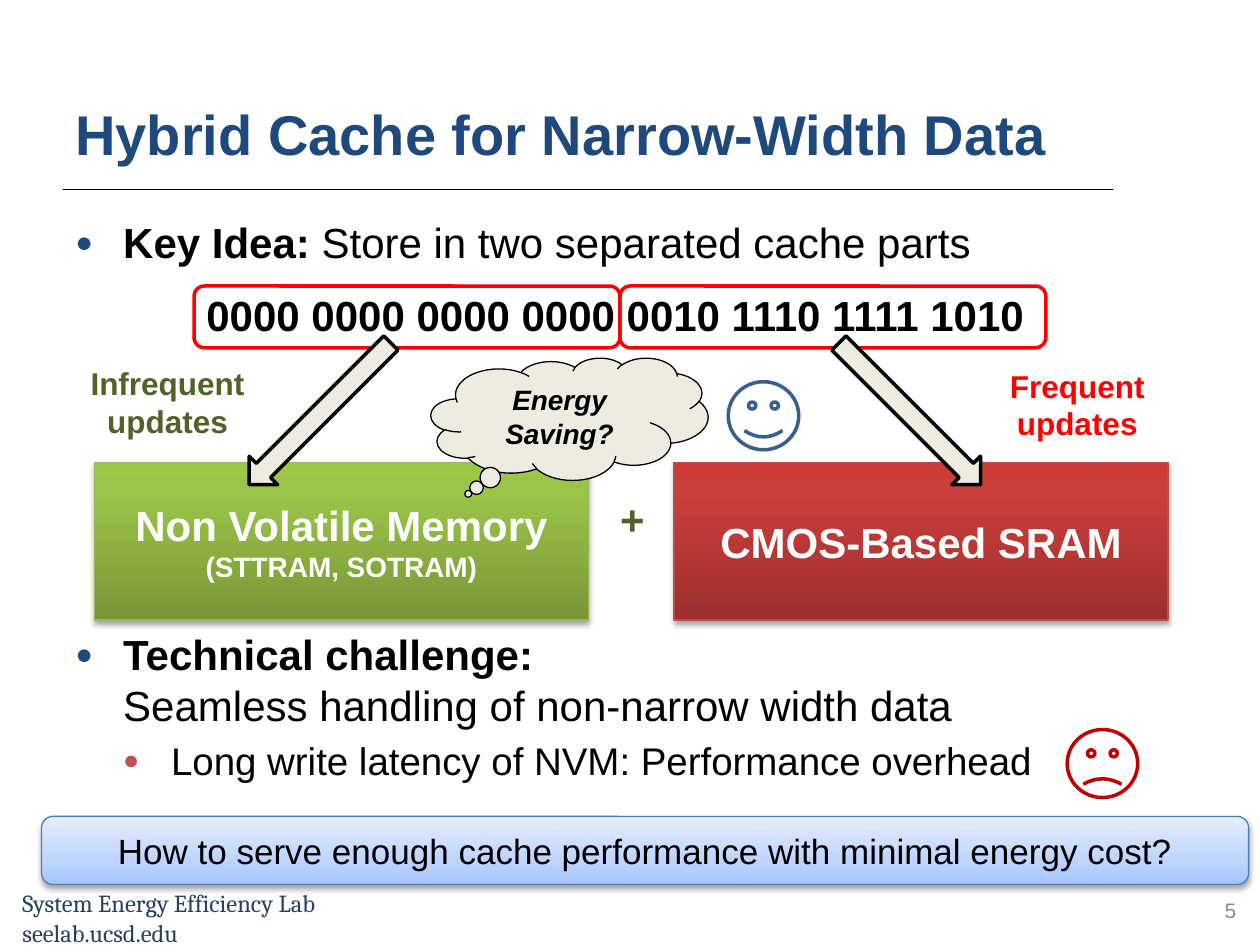
from lxml.etree import SubElement
from pptx import Presentation
from pptx.dml.color import RGBColor
from pptx.enum.shapes import MSO_CONNECTOR, MSO_SHAPE
from pptx.enum.text import MSO_ANCHOR, PP_ALIGN
from pptx.oxml.ns import qn
from pptx.util import Inches, Pt

COLORS = {
    "navy": "1F497D", "footer": "254061", "black": "000000", "white": "FFFFFF",
    "gray": "8C8C8C", "red": "FF0000", "olive": "4F6228", "cream": "EEECE1",
    "brick": "C0504D", "blue": "3A5F8C", "crimson": "C00000",
    "green edge": "98B955", "red edge": "BF4C48", "blue edge": "4B7EBC",
}
GRADIENTS = {  # (position in percent, colour), from the bottom up
    "green": [(0, "779737"), (80, "9BC348"), (100, "9DC746")],
    "red": [(0, "9C2F2D"), (80, "CB3E3A"), (100, "CE3B37")],
    "pale": [(0, "A4C4FF"), (35, "BFD4FF"), (100, "E6EEFF")],
}


def run(text, size, color="black", **formats):
    return text, {"size": Pt(size), "name": "Arial", **formats}, color


# Each text is a list of paragraphs, each paragraph a list of runs.
TITLE = [[run("Hybrid Cache for Narrow-Width Data", 32, "navy", bold=True)]]
FOOTER = [[run(line, 14, "footer", name="Cambria")]
          for line in ("System Energy Efficiency Lab", "seelab.ucsd.edu")]
PAGE_NUMBER = [[run("5", 12, "gray")]]
KEY_IDEA = [[run("Key Idea:", 24, bold=True),
             run(" Store in two separated cache parts", 24)]]
CHALLENGE = [
    [run("Technical challenge:\n", 24, bold=True),
     run("Seamless handling of non-narrow width data", 24)],
    [run("Long write latency of NVM: Performance overhead", 22)],
]
DATA_WORD = [[run("0000 0000 0000 0000 0010 1110 1111 1010", 24, bold=True)]]
PLUS = [[run("+", 24, "olive", bold=True)]]
THOUGHT = [[run("Energy Saving?", 16, bold=True, italic=True)]]
QUESTION = [[run("How to serve enough cache performance with minimal energy cost?", 20)]]

CACHE_PARTS = [
    {"left": 0.75, "half_left": 1.54, "gradient": "green", "edge": "green edge",
     "label": [[run("Non Volatile Memory", 24, "white", bold=True)],
               [run("(STTRAM, SOTRAM)", 16, "white", bold=True)]],
     "arrow_left": 2.38, "arrow_turn": 45,
     "rate": [[run("Infrequent\nupdates", 18, "olive", bold=True)]],
     "rate_at": (0.61, 2.84, 1.44, 0.71)},
    {"left": 5.35, "half_left": 4.92, "gradient": "red", "edge": "red edge",
     "label": [[run("CMOS-Based SRAM", 24, "white", bold=True)]],
     "arrow_left": 7.06, "arrow_turn": 315,
     "rate": [[run("Frequent\nupdates", 18, "red", bold=True)]],
     "rate_at": (7.91, 2.86, 1.28, 0.71)},
]
BULLETS = [("navy", 0.38), ("brick", 0.76)]  # colour and text indent by level
HANGING = 0.38

prs = Presentation()
prs.slide_width, prs.slide_height = Inches(10), Inches(7.5)
slide = prs.slides.add_slide(prs.slide_layouts[6])


def rgb(color):
    return RGBColor.from_string(COLORS[color])


def inches(box):
    return [Inches(value) for value in box]


def add_bullet(paragraph, level):
    color, indent = BULLETS[level]
    props = paragraph._p.get_or_add_pPr()
    props.set("marL", str(Inches(indent)))
    props.set("indent", str(-Inches(HANGING)))
    props.set("lvl", str(level))
    SubElement(SubElement(props, qn("a:buClr")), qn("a:srgbClr"), val=COLORS[color])
    SubElement(props, qn("a:buSzPct"), val="70000")
    SubElement(props, qn("a:buFont"), typeface="Arial")
    SubElement(props, qn("a:buChar"), char="●")


def write(shape, paragraphs, align=PP_ALIGN.LEFT, anchor=MSO_ANCHOR.TOP,
          wrap=True, bulleted=False):
    frame = shape.text_frame
    frame.word_wrap, frame.vertical_anchor = wrap, anchor
    for index, runs in enumerate(paragraphs):
        paragraph = frame.add_paragraph() if index else frame.paragraphs[0]
        paragraph.alignment = align
        if bulleted:
            if index:
                paragraph.space_before = Pt(4.4)
            add_bullet(paragraph, index)
        for text, formats, color in runs:
            for number, line in enumerate(text.split("\n")):
                if number:
                    paragraph.add_line_break()
                if not line:
                    continue
                part = paragraph.add_run()
                part.text = line
                for name, value in formats.items():
                    setattr(part.font, name, value)
                part.font.color.rgb = rgb(color)


def add_text(box, paragraphs, **layout):
    write(slide.shapes.add_textbox(*inches(box)), paragraphs, **layout)


def add_figure(kind, box, edge, width, fill=None):
    figure = slide.shapes.add_shape(kind, *inches(box))
    figure.shadow.inherit = False
    figure.line.color.rgb, figure.line.width = rgb(edge), Pt(width)
    if fill:
        figure.fill.solid()
        figure.fill.fore_color.rgb = rgb(fill)
    else:
        figure.fill.background()
    return figure


def add_panel(kind, box, edge, gradient, label):
    """Add a labelled block with a vertical gradient and a soft shadow."""
    panel = add_figure(kind, box, edge, 0.75)
    panel.fill.gradient()
    panel.fill.gradient_angle = 90
    properties = panel._element.spPr
    stops = properties.find(qn("a:gradFill")).find(qn("a:gsLst"))
    for stop in list(stops):
        stops.remove(stop)
    for position, color in GRADIENTS[gradient]:
        stop = SubElement(stops, qn("a:gs"), pos=str(position * 1000))
        SubElement(stop, qn("a:srgbClr"), val=color)
    shadow = SubElement(properties.find(qn("a:effectLst")), qn("a:outerShdw"),
                        blurRad=str(Pt(3.1)), dist=str(Pt(1.8)),
                        dir="5400000", rotWithShape="0")
    tint = SubElement(shadow, qn("a:srgbClr"), val=COLORS["black"])
    SubElement(tint, qn("a:alpha"), val="35000")
    write(panel, label, PP_ALIGN.CENTER, MSO_ANCHOR.MIDDLE)


add_text((0.08, 7, 3.17, 0.57), FOOTER)
divider = slide.shapes.add_connector(MSO_CONNECTOR.STRAIGHT, *inches((0.5, 1.5, 8.83, 1.5)))
divider.line.color.rgb, divider.line.width = rgb("black"), Pt(0.5)
SubElement(divider._element.spPr, qn("a:effectLst"))

add_text((0.5, 0.42, 8.25, 0.95), TITLE, anchor=MSO_ANCHOR.BOTTOM)
add_text((0.5, 1.67, 9, 0.5), KEY_IDEA, bulleted=True)
add_text((0.5, 4.94, 9, 1.4), CHALLENGE, bulleted=True)
add_text((7.58, 7.02, 2.33, 0.4), PAGE_NUMBER, align=PP_ALIGN.RIGHT, anchor=MSO_ANCHOR.MIDDLE)
add_text((1.54, 2.25, 6.76, 0.5), DATA_WORD, wrap=False)

for part in CACHE_PARTS:
    add_figure(MSO_SHAPE.ROUNDED_RECTANGLE, (part["half_left"], 2.27, 3.38, 0.49), "red", 2)
    add_panel(MSO_SHAPE.RECTANGLE, (part["left"], 3.67, 3.92, 1.25),
              part["edge"], part["gradient"], part["label"])
    arrow = add_figure(MSO_SHAPE.DOWN_ARROW, (part["arrow_left"], 2.49, 0.32, 1.59),
                       "black", 2, "cream")
    arrow.rotation = part["arrow_turn"]
    add_text(part["rate_at"], part["rate"], align=PP_ALIGN.CENTER, wrap=False)

add_text((4.82, 3.87, 0.4, 0.5), PLUS, align=PP_ALIGN.CENTER, wrap=False)
cloud = add_figure(MSO_SHAPE.CLOUD_CALLOUT, (3.42, 2.84, 2.2, 0.97), "black", 0.75, "cream")
cloud.adjustments[0], cloud.adjustments[1] = -0.365, 0.613
write(cloud, THOUGHT, PP_ALIGN.CENTER)

add_figure(MSO_SHAPE.SMILEY_FACE, (5.78, 3.03, 0.56, 0.54), "blue", 2)
frown = add_figure(MSO_SHAPE.SMILEY_FACE, (8.47, 5.79, 0.56, 0.54), "crimson", 2)
frown.adjustments[0] = -0.04
add_panel(MSO_SHAPE.ROUNDED_RECTANGLE, (0.33, 6.48, 9.58, 0.54), "blue edge", "pale", QUESTION)

prs.save("out.pptx")
